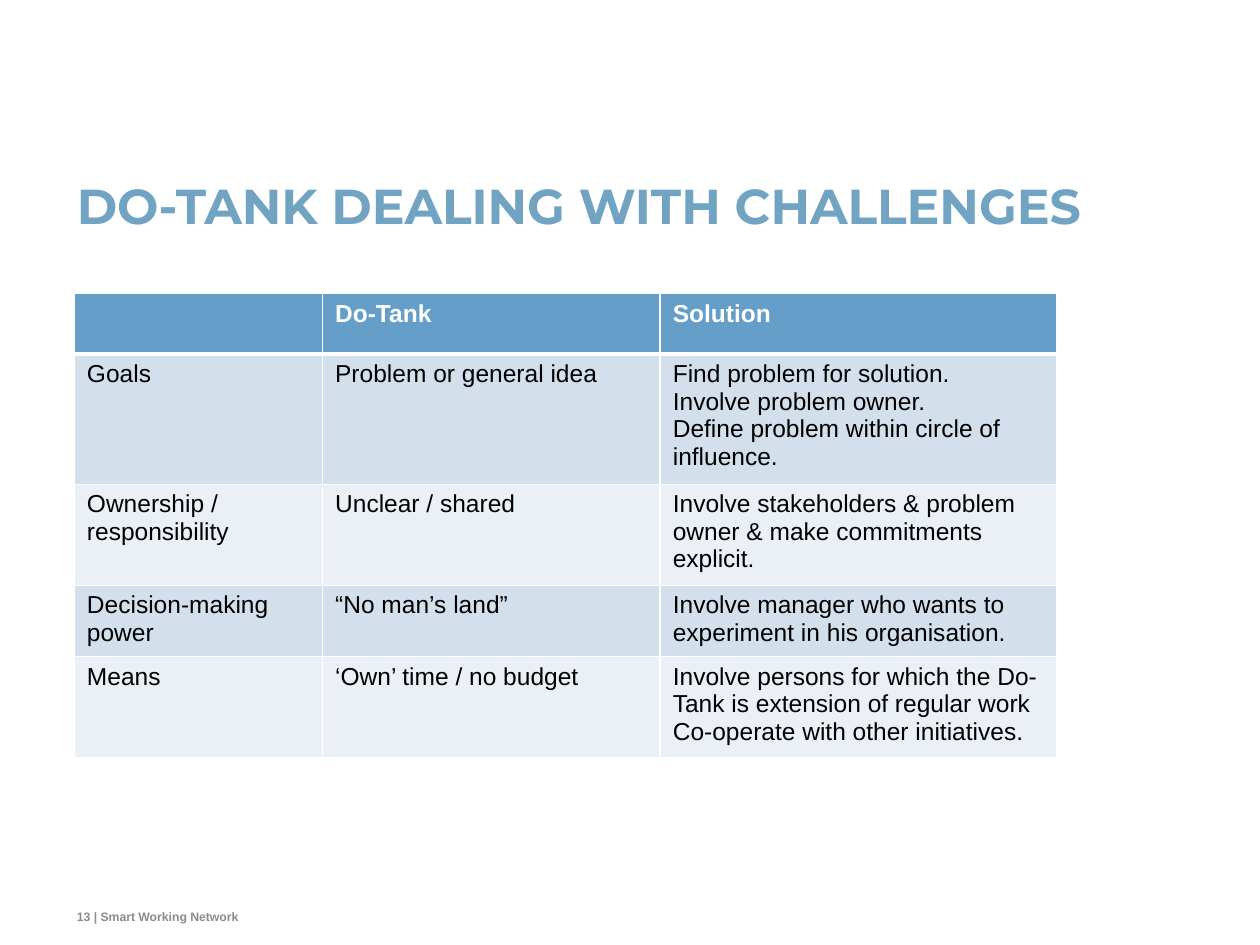
from dataclasses import dataclass

from lxml import etree
from pptx import Presentation
from pptx.dml.color import RGBColor
from pptx.enum.text import MSO_ANCHOR, PP_ALIGN
from pptx.oxml.ns import qn
from pptx.util import Inches, Pt

TOP, BOTTOM = MSO_ANCHOR.TOP, MSO_ANCHOR.BOTTOM
LEFT = PP_ALIGN.LEFT


@dataclass(frozen=True)
class Theme:
    head_font: str = "Montserrat"
    body_font: str = "Arial"
    title: str = "71A4C3"
    foot: str = "8C8C8C"
    white: str = "FFFFFF"
    black: str = "000000"
    header: str = "649EC9"
    bands: tuple = ("D3DFEB", "EAF0F5")
    title_size: int = 28
    body_size: int = 14
    foot_size: int = 7
    thin: int = 1
    thick: int = 3


class Deck:
    def __init__(self, theme):
        self.theme = theme
        self.prs = Presentation()
        self.prs.slide_width, self.prs.slide_height = Inches(10), Inches(7.5)
        self.slide = self.prs.slides.add_slide(self.prs.slide_layouts[5])

    def style(self, frame, font, size, color, bold):
        for para in frame.paragraphs:
            para.alignment = LEFT
            for run in para.runs:
                run.font.name, run.font.size = font, Pt(size)
                run.font.bold = bold
                run.font.color.rgb = RGBColor.from_string(color)

    def inset(self, frame, anchor):
        frame.margin_left = frame.margin_right = 0
        frame.margin_top = frame.margin_bottom = 0
        frame.vertical_anchor = anchor

    def title(self, text, left, top, width, height):
        t = self.theme
        shape = self.slide.shapes.title
        shape.left, shape.top = Inches(left), Inches(top)
        shape.width, shape.height = Inches(width), Inches(height)
        frame = shape.text_frame
        frame.text = text
        self.inset(frame, TOP)
        frame.paragraphs[0].line_spacing = Pt(t.title_size)
        self.style(frame, t.head_font, t.title_size, t.title, True)

    def footer(self, text, left, top, width, height):
        t = self.theme
        box = self.slide.shapes.add_textbox(
            Inches(left), Inches(top), Inches(width), Inches(height))
        frame = box.text_frame
        frame.text = text
        frame.word_wrap = False
        self.inset(frame, BOTTOM)
        self.style(frame, t.body_font, t.foot_size, t.foot, True)

    def border(self, cell, row):
        # The rule between header and body is thicker than the rest
        t = self.theme
        props = cell._tc.get_or_add_tcPr()
        for side in "LRTB":
            wide = (row, side) in ((0, "B"), (1, "T"))
            line = etree.SubElement(props, qn(f"a:ln{side}"))
            line.set("w", str(Pt(t.thick if wide else t.thin)))
            fill = etree.SubElement(line, qn("a:solidFill"))
            etree.SubElement(fill, qn("a:srgbClr")).set("val", t.white)

    def table(self, rows, left, top, widths, heights):
        t = self.theme
        grid = self.slide.shapes.add_table(
            len(rows), len(widths), Inches(left), Inches(top),
            Inches(sum(widths)), Inches(sum(heights))).table
        for col, width in zip(grid.columns, widths):
            col.width = Inches(width)
        for r, (texts, height) in enumerate(zip(rows, heights)):
            grid.rows[r].height = Inches(height)
            head = r == 0
            back = t.header if head else t.bands[(r - 1) % 2]
            ink = t.white if head else t.black
            for c, text in enumerate(texts):
                cell = grid.cell(r, c)
                cell.text_frame.text = text
                self.style(cell.text_frame, t.body_font, t.body_size, ink, head)
                self.border(cell, r)
                cell.fill.solid()
                cell.fill.fore_color.rgb = RGBColor.from_string(back)


ROWS = [
    ("", "Do-Tank", "Solution"),
    ("Goals", "Problem or general idea",
     "Find problem for solution.\nInvolve problem owner.\n"
     "Define problem within circle of influence."),
    ("Ownership / responsibility", "Unclear / shared",
     "Involve stakeholders & problem owner & make commitments explicit."),
    ("Decision-making power", "“No man’s land”",
     "Involve manager who wants to experiment in his organisation."),
    ("Means", "‘Own’ time / no budget",
     "Involve persons for which the Do-Tank is extension of regular work\n"
     "Co-operate with other initiatives."),
]


def main():
    deck = Deck(Theme())
    # Heading
    deck.title("DO-TANK DEALING WITH CHALLENGES", 0.61, 1.47, 8.81, 0.79)
    # Page number and network name
    deck.footer("13 | Smart Working Network", 0.61, 7.14, 4.72, 0.19)
    # Challenges and their solutions
    deck.table(ROWS, 0.59, 2.33, (1.97, 2.68, 3.15),
               (0.48, 0.98, 0.75, 0.54, 0.75))
    deck.prs.save("out.pptx")


if __name__ == "__main__":
    main()
